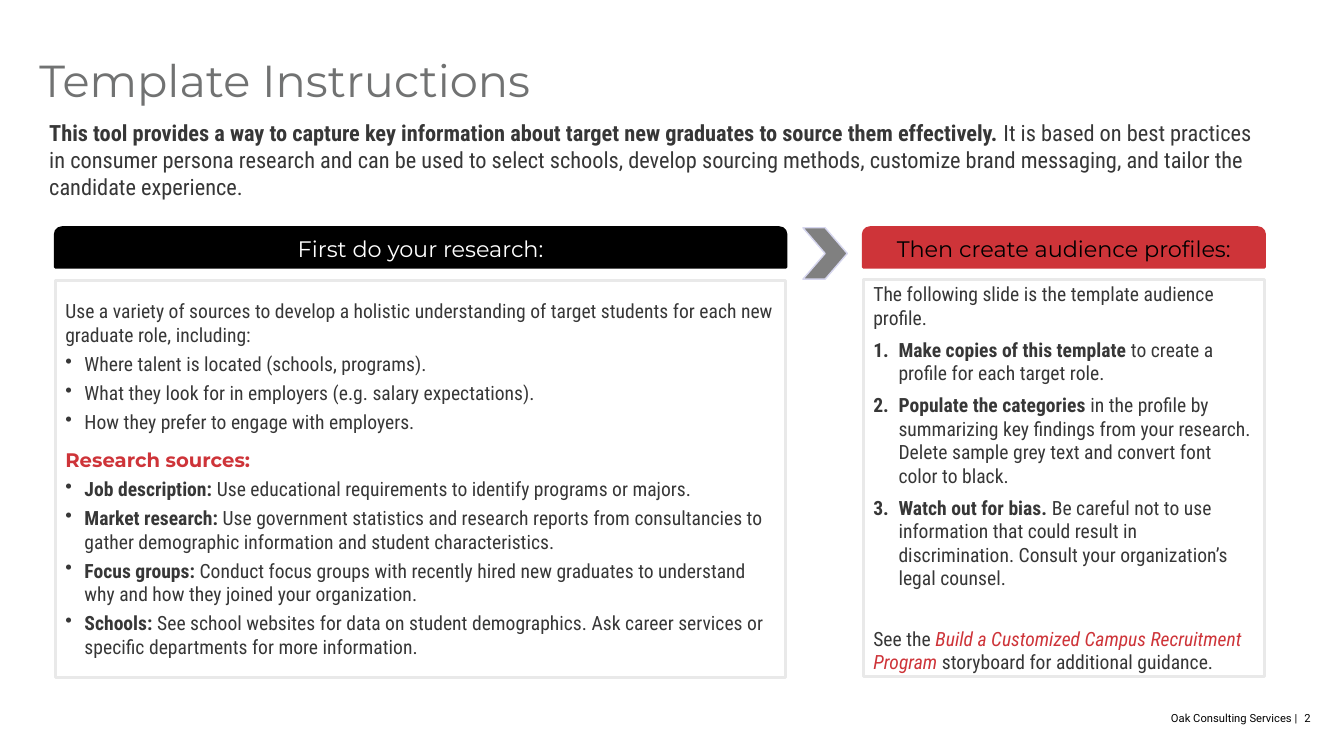
from dataclasses import dataclass

import lxml.etree
import pptx
import pptx.dml.color
import pptx.enum.shapes
import pptx.enum.text
import pptx.oxml.ns
import pptx.util

Inches = pptx.util.Inches
Pt = pptx.util.Pt
SHAPES = pptx.enum.shapes.MSO_SHAPE
ALIGN = pptx.enum.text.PP_ALIGN
ANCHOR = pptx.enum.text.MSO_ANCHOR


@dataclass(frozen=True)
class Theme:
    ink: str = "373737"
    title: str = "717272"
    accent: str = "CE3439"
    black: str = "000000"
    white: str = "FFFFFF"
    border: str = "E9E9E9"
    chevron: str = "808080"
    chevron_edge: str = "D6D6EE"
    heading_font: str = "Montserrat"
    body_font: str = "Roboto Condensed"
    footer_font: str = "Roboto"
    title_size: int = 32
    lead_size: int = 16
    body_size: int = 14
    footer_size: int = 8


THEME = Theme()
BODY = {"name": THEME.body_font, "size": Pt(THEME.body_size), "color": THEME.ink}
BOLD = {"bold": True}
LEAD = {**BODY, "size": Pt(THEME.lead_size)}
HEADING = {"name": THEME.heading_font, "size": Pt(THEME.lead_size)}
SUBHEADING = {"name": THEME.heading_font, "color": THEME.accent, "bold": True}
REFERENCE = {"color": THEME.accent, "italic": True}
FOOTER = {"name": THEME.footer_font, "size": Pt(THEME.footer_size), "color": THEME.black}
NO_INSETS = {f"margin_{side}": 0 for side in ("left", "top", "right", "bottom")}

DOT = ("buChar", {"char": "•"}, 0.19)
NUMBER = ("buAutoNum", {"type": "arabicPeriod"}, 0.25)

LEFT_X, LEFT_WIDTH = 0.55, 7.25
RIGHT_X, RIGHT_WIDTH = 8.57, 3.98
BAR_Y, BAR_HEIGHT = 2.26, 0.39
PANEL_HEIGHT = 3.94

RESEARCH = [
    ([("Use a variety of sources to develop a holistic understanding of target students "
       "for each new graduate role, including:", {})], None, {}),
    ([("Where talent is located (schools, programs).", {})], DOT, {}),
    ([("What they look for in employers (e.g. salary expectations).", {})], DOT, {}),
    ([("How they prefer to engage with employers.", {})], DOT, {"space_after": Pt(10)}),
    ([("Research sources:", SUBHEADING)], None, {}),
    ([("Job description: ", BOLD),
      ("Use educational requirements to identify programs or majors.", {})], DOT, {}),
    ([("Market research: ", BOLD),
      ("Use government statistics and research reports from consultancies to gather "
       "demographic information and student characteristics.", {})], DOT, {}),
    ([("Focus groups: ", BOLD),
      ("Conduct focus groups with recently hired new graduates to understand why and how "
       "they joined your organization.", {})], DOT, {}),
    ([("Schools: ", BOLD),
      ("See school websites for data on student demographics. Ask career services or "
       "specific departments for more information.", {})], DOT, {}),
]

PROFILES = [
    ([("The following slide is the template audience profile.", {})], None, {}),
    ([("Make copies of this template ", BOLD),
      ("to create a profile for each target role.", {})], NUMBER, {}),
    ([("Populate the categories ", BOLD),
      ("in the profile by summarizing key findings from your research. Delete sample grey "
       "text and convert font color to black.", {})], NUMBER, {}),
    ([("Watch out for bias. ", BOLD),
      ("Be careful not to use information that could result in discrimination. Consult "
       "your organization’s legal counsel.", {})], NUMBER, {}),
    ([("See the ", {}),
      ("Build a Customized Campus Recruitment Program ", REFERENCE),
      ("storyboard for additional guidance.", {})], None,
     {"space_before": Pt(20.4), "space_after": Pt(4)}),
]

INTRO = [
    ([("This tool provides a way to capture key information about target new graduates to "
       "source them effectively. ", BOLD),
      ("It is based on best practices in consumer persona research and can be used to "
       "select schools, develop sourcing methods, customize brand messaging, and tailor "
       "the candidate experience.", {})], None, {}),
]


def rgb(code):
    return pptx.dml.color.RGBColor.from_string(code)


def apply(target, values):
    for attribute, value in values.items():
        if attribute == "color":
            target.color.rgb = rgb(value)
        else:
            setattr(target, attribute, value)


def add_list_mark(paragraph, mark):
    tag, attributes, indent = mark
    properties = paragraph._p.get_or_add_pPr()
    properties.set("marL", str(Inches(indent)))
    properties.set("indent", str(-Inches(indent)))
    lxml.etree.SubElement(properties, pptx.oxml.ns.qn(f"a:{tag}"), attributes)


def write(frame, paragraphs, font, layout, frame_format):
    apply(frame, {"word_wrap": True, **frame_format})
    for index, (runs, mark, spacing) in enumerate(paragraphs):
        paragraph = frame.paragraphs[0] if index == 0 else frame.add_paragraph()
        apply(paragraph, {**layout, **spacing})
        if mark:
            add_list_mark(paragraph, mark)
        for text, emphasis in runs:
            run = paragraph.add_run()
            run.text = text
            apply(run.font, {**font, **emphasis})


def add_block(slide, kind, place, fill, edge, edge_width=2.25):
    block = slide.shapes.add_shape(kind, *map(Inches, place))
    block.shadow.inherit = False
    block.fill.solid()
    block.fill.fore_color.rgb = rgb(fill)
    block.line.color.rgb = rgb(edge)
    block.line.width = Pt(edge_width)
    return block


def add_heading_bar(slide, x, width, text, fill, color):
    bar = add_block(slide, SHAPES.ROUND_2_SAME_RECTANGLE,
                    (x, BAR_Y, width, BAR_HEIGHT), fill, fill)
    write(bar.text_frame, [([(text, {})], None, {})], {**HEADING, "color": color},
          {"alignment": ALIGN.CENTER}, {"vertical_anchor": ANCHOR.MIDDLE})


def add_panel(slide, x, y, width, paragraphs, gap):
    panel = add_block(slide, SHAPES.RECTANGLE, (x, y, width, PANEL_HEIGHT),
                      THEME.white, THEME.border)
    write(panel.text_frame, paragraphs, BODY,
          {"alignment": ALIGN.LEFT, "space_after": Pt(gap)},
          {"vertical_anchor": ANCHOR.MIDDLE})


def add_text(slide, place, paragraphs, font, layout, frame_format):
    box = slide.shapes.add_textbox(*map(Inches, place))
    write(box.text_frame, paragraphs, font, layout, frame_format)


def add_title(slide, text):
    title = slide.shapes.title
    apply(title, {"left": Inches(0.39), "top": Inches(0.58),
                  "width": Inches(12.16), "height": Inches(1.24)})
    write(title.text_frame, [([(text, {})], None, {})],
          {**HEADING, "size": Pt(THEME.title_size), "color": THEME.title},
          {"alignment": ALIGN.LEFT, "line_spacing": 0.9},
          {**NO_INSETS, "vertical_anchor": ANCHOR.TOP})


def add_footer(slide):
    for text, x, width in (("Oak Consulting Services |", 10.74, 2.14), ("2", 12.88, 0.13)):
        add_text(slide, (x, 7.04, width, 0.2), [([(text, {})], None, {})], FOOTER,
                 {"alignment": ALIGN.RIGHT, "line_spacing": 1.1}, NO_INSETS)


def main():
    deck = pptx.Presentation()
    apply(deck, {"slide_width": Inches(13.34), "slide_height": Inches(7.5)})
    slide = deck.slides.add_slide(deck.slide_layouts.get_by_name("Title Only"))

    add_title(slide, "Template Instructions")
    add_text(slide, (0.39, 1.21, 12.21, 0.74), INTRO, LEAD, {},
             {"vertical_anchor": ANCHOR.MIDDLE})
    add_panel(slide, LEFT_X, 2.78, LEFT_WIDTH, RESEARCH, 4)
    add_heading_bar(slide, LEFT_X, LEFT_WIDTH, "First do your research:",
                    THEME.black, THEME.white)
    add_heading_bar(slide, RIGHT_X, RIGHT_WIDTH, "Then create audience profiles:",
                    THEME.accent, THEME.black)
    add_panel(slide, RIGHT_X, 2.77, RIGHT_WIDTH, PROFILES, 6)
    add_block(slide, SHAPES.CHEVRON, (7.97, BAR_Y, 0.44, 0.51),
              THEME.chevron, THEME.chevron_edge, 1)
    add_footer(slide)

    deck.save("out.pptx")


if __name__ == "__main__":
    main()
